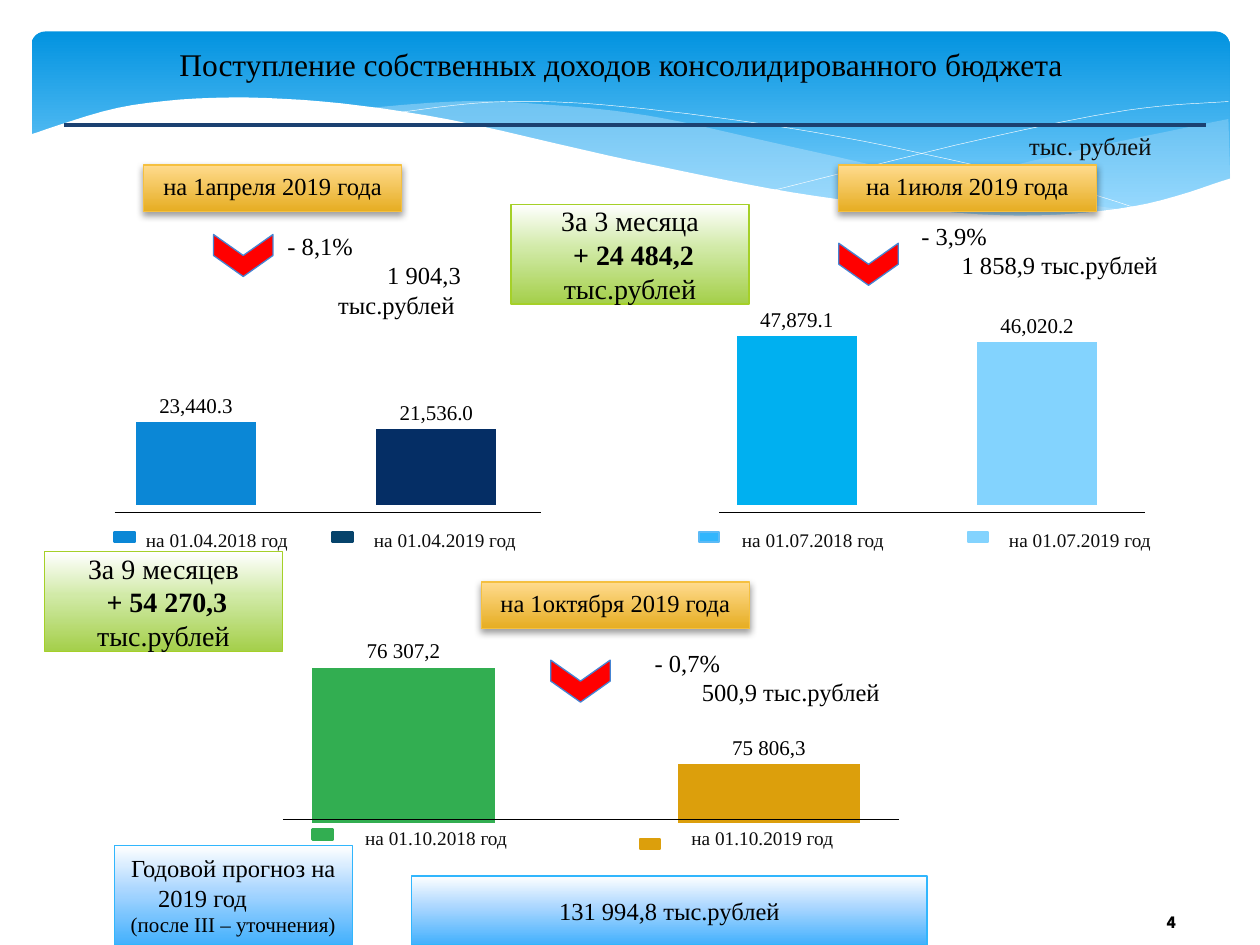
from collections import namedtuple

from lxml import etree
from pptx import Presentation
from pptx.chart import data as chart_data
from pptx.dml.color import RGBColor
from pptx.enum import chart as charts, shapes, text
from pptx.oxml.ns import qn
from pptx.util import Pt

COLORS = {
    "black": "000000", "white": "FFFFFF", "ink": "0D0D0D", "rule": "1B4171", "mist": "C6E7FC",
    "band_top": "0293E0", "band_end": "83D3FE", "red": "FF0000", "arrow_edge": "4584D3",
    "gold_top": "FFDB8E", "gold_end": "E6AD22", "gold_edge": "F5C040",
    "lime_mid": "D1EAA7", "lime_end": "A4CF4A", "lime_edge": "A5D028",
    "sky_mid": "ACD7FF", "sky_end": "42B0FD", "sky_edge": "31B6FD",
    "april18": "0B87D6", "april19": "052E65", "april19_key": "06436B",
    "july18": "00B0F0", "july18_edge": "5BBAF6", "july19": "83D3FE",
    "october18": "32AE51", "october19": "DC9F0C",
}
SERIF = "Times New Roman"
GOLD = [(0, "gold_top"), (100, "gold_end")]
LIME = [(0, "white"), (44, "lime_mid"), (100, "lime_end")]
SKY = [(0, "white"), (44, "sky_mid"), (100, "sky_end")]
THIN_LINE = {"closed": False, "edge": "white", "width": 0.25}

# Header waves, back to front: (look, smooth edges through points in the header box)
WAVES = [
    ({"fill": "mist", "alpha": 29},  # right
     [[(684, 50), (602, 67), (524, 85), (458, 97)],
      [(458, 97), (527, 104), (568, 106), (634, 99), (685, 84)]]),
    ({"fill": "mist", "alpha": 40},  # middle
     [[(625, 102), (540, 89), (435, 66), (352, 48), (284, 41), (242, 40), (188, 44)],
      [(188, 44), (258, 55), (364, 79), (461, 98), (547, 106), (625, 102)]]),
    (THIN_LINE, [[(204, 47), (271, 40), (349, 44), (461, 60), (580, 86), (635, 102)]]),
    (THIN_LINE, [[(423, 91), (541, 62), (626, 45), (684, 40)]]),
    ({"fill": "white"},  # front, down to the page
     [[(685, 84), (629, 100), (553, 105), (448, 94), (344, 74), (226, 48), (134, 38), (58, 42),
       (-1, 59)], [(-1, 143), (685, 143)]]),
]

# Places are (left, top); an axis and a plate also have a width.
Period = namedtuple("Period", "date plate arrow change_at change axis legend")
# Key and label places, label, fill, edge
Entry = namedtuple("Entry", "key label_at label fill edge", defaults=[None])
# Date, value, colour, own label text
Bar = namedtuple("Bar", "date value color label", defaults=[None])
GAP = None

PERIODS = [
    Period("на 1апреля 2019 года", (82, 94.3, 147.6), (127, 129), (156.2, 128.3),
           [("- 8,1%", 1), ("1 904,3", 58), ("тыс.рублей", 30)], (65.5, 292.7, 243.5),
           [Entry((65.5, 304), (76.3, 298.3), "на 01.04.2018 год", "april18"),
            Entry((190, 304), (206.6, 298.3), "на 01.04.2019 год", "april19_key")]),
    Period("на 1июля 2019 года", (479, 94.3, 147.6), (484.3, 134), (518.4, 122.6),
           [("- 3,9%", 1), ("1 858,9 тыс.рублей", 24)], (411, 292.7, 243.5),
           [Entry((399.6, 304), (416.9, 298.3), "на 01.07.2018 год", "sky_edge", "july18_edge"),
            Entry((553, 304), (569.5, 298.3), "на 01.07.2019 год", "july19")]),
    Period("на 1октября 2019 года", (275, 332.6, 153.4), (319.7, 372.2), (366, 366.5),
           [("- 0,7%", 1), ("500,9 тыс.рублей", 28)], (161.6, 468.5, 352),
           [Entry((178.6, 474), (201.6, 468.7), "на 01.10.2018 год", "october18"),
            Entry((365.8, 479.5), (388, 468.7), "на 01.10.2019 год", "october19")]),
]
HALF_YEAR_BARS = [
    Bar("на 01.04.2018 год", 23440.3, "april18"), GAP, Bar("на 01.04.2019 год", 21536.0, "april19"),
    GAP, GAP,
    Bar("на 01.07.2018 год", 47879.1, "july18"), GAP, Bar("на 01.07.2019 год", 46020.2, "july19")]
OCTOBER_BARS = [
    Bar("на 01.10.2018 год", 76307.2, "october18", "76 307,2"), GAP,
    Bar("на 01.10.2019 год", 75806.3, "october19", "75 806,3")]


def rgb(name):
    return RGBColor.from_string(COLORS[name])


def apply(target, values):
    for key, value in values.items():
        setattr(target, key, value)


def style_font(font, size, color="black", name=SERIF, bold=False):
    apply(font, {"size": Pt(size), "name": name, "bold": bold})
    font.color.rgb = rgb(color)


def line_of(words, indent=None, **font):
    """A paragraph of one run; an indent makes it left-aligned."""
    return [(words, font)], indent


def write(frame, paragraphs, size, align="CENTER", anchor="MIDDLE", wrap=True, **font):
    apply(frame, {"word_wrap": wrap, "vertical_anchor": getattr(text.MSO_ANCHOR, anchor)})
    for i, (runs, indent) in enumerate(paragraphs):
        line = frame.paragraphs[0] if i == 0 else frame.add_paragraph()
        line.alignment = getattr(text.PP_ALIGN, align if indent is None else "LEFT")
        if indent:
            line._p.get_or_add_pPr().set("marL", str(Pt(indent)))
        for words, own_font in runs:
            run = line.add_run()
            run.text = words
            style_font(run.font, **{"size": size, **font, **own_font})


def paint(shape, fill=None, edge=None, width=0.75, alpha=None):
    """Fill with a colour name, a list of gradient stops, or nothing."""
    shape.shadow.inherit = False
    if isinstance(fill, list):
        shape.fill.gradient()
        shape.fill.gradient_angle = 270
        stops = shape.element.spPr.find(qn("a:gradFill")).find(qn("a:gsLst"))
        for old in list(stops):
            stops.remove(old)
        for position, color in fill:
            stop = etree.SubElement(stops, qn("a:gs"), pos=str(position * 1000))
            etree.SubElement(stop, qn("a:srgbClr"), val=COLORS[color])
    elif fill:
        shape.fill.solid()
        shape.fill.fore_color.rgb = rgb(fill)
        if alpha:
            color = shape.element.spPr.find(qn("a:solidFill"))[0]
            etree.SubElement(color, qn("a:alpha"), val=str(alpha * 1000))
    else:
        shape.fill.background()
    if edge:
        shape.line.color.rgb = rgb(edge)
        shape.line.width = Pt(width)
    else:
        shape.line.fill.background()


def add_box(slide, kind, box, **look):
    shape = slide.shapes.add_shape(getattr(shapes.MSO_SHAPE, kind), *map(Pt, box))
    paint(shape, **look)
    return shape


def add_text(slide, box, paragraphs, size, **look):
    write(slide.shapes.add_textbox(*map(Pt, box)).text_frame, paragraphs, size, **look)


def add_rule(slide, left, top, width, color="black", weight=0.75):
    rule = slide.shapes.add_connector(shapes.MSO_CONNECTOR.STRAIGHT, Pt(left), Pt(top),
                                      Pt(left + width), Pt(top))
    rule.line.color.rgb = rgb(color)
    rule.line.width = Pt(weight)
    etree.SubElement(rule._element.spPr, qn("a:effectLst"))


def smooth(points, steps=8):
    """Catmull-Rom curve through the points."""
    padded = [points[0], *points, points[-1]]
    curve = [points[0]]
    for before, start, end, after in zip(padded, padded[1:], padded[2:], padded[3:]):
        for t in (n / steps for n in range(1, steps + 1)):
            curve.append(tuple(
                (2 * q + (r - p) * t + (2 * p - 5 * q + 4 * r - s) * t ** 2
                 + (3 * q - p - 3 * r + s) * t ** 3) / 2
                for p, q, r, s in zip(before, start, end, after)))
    return curve


def add_wave(slide, left, top, edges, closed=True, **look):
    units = 10  # per point
    outline = [((left + x) * units, (top + y) * units) for edge in edges for x, y in smooth(edge)]
    builder = slide.shapes.build_freeform(*outline[0], scale=Pt(1) / units)
    builder.add_line_segments(outline[1:], close=closed)
    paint(builder.convert_to_shape(), **look)


def header(slide, left, top, width, height):
    band = add_box(slide, "ROUNDED_RECTANGLE", (left, top, width, height),
                   fill=[(0, "band_top"), (90, "band_end")])
    band.adjustments[0] = 0.07
    for look, edges in WAVES:
        add_wave(slide, left, top, edges, **look)
    # Title above the band
    title = slide.shapes.title
    title_box = {"left": left + 5.5, "top": top - 10, "width": 663, "height": 77}
    apply(title, {side: Pt(length) for side, length in title_box.items()})
    slide.shapes._spTree.append(title.element)
    title.text_frame.margin_bottom = Pt(23)
    write(title.text_frame, [line_of("Поступление собственных доходов консолидированного бюджета")], 18)
    # Rule and unit
    add_rule(slide, left + 18.7, top + 53.3, 652.3, "rule", 2.25)
    add_text(slide, (left + 563, top + 53.3, 85, 24.5), [line_of("тыс. рублей")], 14,
             align="LEFT", anchor="TOP", wrap=False, color="ink")


def date_plate(slide, left, top, width, label):
    plate = add_box(slide, "RECTANGLE", (left, top, width, 26.6), fill=GOLD, edge="gold_edge")
    effects = plate.element.spPr.find(qn("a:effectLst"))
    shadow = etree.SubElement(effects, qn("a:outerShdw"), blurRad=str(Pt(4)), dist=str(Pt(2)),
                              dir="5400000", rotWithShape="0")
    color = etree.SubElement(shadow, qn("a:srgbClr"), val=COLORS["black"])
    etree.SubElement(color, qn("a:alpha"), val="38000")
    write(plate.text_frame, [line_of(label)], 14, anchor="TOP")


def period_panel(slide, period):
    """Date plate, down arrow with the change, axis line and legend."""
    date_plate(slide, *period.plate, period.date)
    arrow = add_box(slide, "CHEVRON", (*period.arrow, 24, 34), fill="red", edge="arrow_edge")
    arrow.rotation = 90
    add_text(slide, (*period.change_at, 170, 51), [line_of(*line) for line in period.change], 14,
             anchor="TOP")
    add_rule(slide, *period.axis)
    for entry in period.legend:
        add_box(slide, "RECTANGLE", (*entry.key, 11.5, 5.7), fill=entry.fill,
                edge=entry.edge or entry.fill, width=1.25)
        add_text(slide, (*entry.label_at, 96.5, 21), [line_of(entry.label)], 11,
                 align="LEFT", anchor="TOP", wrap=False, color="ink")


def total_box(slide, left, top, period, amount):
    box = add_box(slide, "RECTANGLE", (left, top, 136, 57), fill=LIME, edge="lime_edge")
    growth = [(f" {amount} ", {"bold": True}), ("тыс.рублей", {})], None
    write(box.text_frame, [line_of(period), growth], 16)


def forecast(slide, left, top):
    name = add_box(slide, "RECTANGLE", (left, top, 136, 57), fill=SKY, edge="sky_edge")
    write(name.text_frame, [line_of("Годовой прогноз на"), line_of("2019 год", 18),
                            line_of("(после III – уточнения)", size=12)], 14)
    amount = add_box(slide, "RECTANGLE", (left + 170, top + 17.5, 294.5, 39.5), fill=SKY, edge="sky_edge")
    write(amount.text_frame, [line_of("131 994,8 тыс.рублей")], 14)


def page_number(slide, left, top, number):
    add_text(slide, (left, top, 83, 29), [line_of(number)], 10, name="League Spartan", bold=True)


def income_chart(slide, box, plot_box, low, high, bars):
    source = chart_data.CategoryChartData(number_format="#,##0.0")
    source.categories = ["1"]
    for bar in bars:
        source.add_series(bar.date if bar else "", [bar.value if bar else None])
    chart = slide.shapes.add_chart(charts.XL_CHART_TYPE.COLUMN_CLUSTERED, *map(Pt, box), source).chart
    apply(chart, {"has_legend": False, "has_title": False})
    style_font(chart.font, 18, name="Calibri")
    apply(chart.value_axis, {"visible": False, "has_major_gridlines": False,
                             "minimum_scale": low, "maximum_scale": high})
    chart.category_axis.visible = False
    plot = chart.plots[0]
    apply(plot, {"gap_width": 150, "overlap": 0, "vary_by_categories": False})
    above = charts.XL_LABEL_POSITION.OUTSIDE_END
    for series, bar in zip(plot.series, bars):
        if bar is GAP:
            continue
        series.format.fill.solid()
        series.format.fill.fore_color.rgb = rgb(bar.color)
        apply(series.data_labels, {"show_value": True, "number_format": "#,##0.0",
                                   "number_format_is_linked": False, "position": above})
        style_font(series.data_labels.font, 12)
        if bar.label:
            label = series.points[0].data_label
            run = label.text_frame.paragraphs[0].add_run()
            run.text = bar.label
            style_font(run.font, 12)
            label.position = above
    # Fixed inner plot area
    area = chart._chartSpace.find(".//" + qn("c:plotArea"))
    for old in area.findall(qn("c:layout")):
        area.remove(old)
    layout = etree.Element(qn("c:layout"))
    area.insert(0, layout)
    manual = etree.SubElement(layout, qn("c:manualLayout"))
    settings = {"layoutTarget": "inner", "xMode": "edge", "yMode": "edge", **dict(zip("xywh", plot_box))}
    for tag, value in settings.items():
        etree.SubElement(manual, qn("c:" + tag), val=str(value))


def main():
    deck = Presentation()
    deck.slide_width, deck.slide_height = Pt(720), Pt(540)
    slide = deck.slides.add_slide(deck.slide_layouts[5])
    header(slide, 18, 18, 684.7, 112.3)
    income_chart(slide, (19.5, 162.3, 672.5, 130.3), (0.01, 0.04, 0.97, 0.93), 0, 60000, HALF_YEAR_BARS)
    income_chart(slide, (100, 349.5, 500, 136), (0, 0.16, 0.94, 0.73), 75500, 76400, OCTOBER_BARS)
    for period in PERIODS:
        period_panel(slide, period)
    total_box(slide, 292, 116.8, "За 3 месяца", "+ 24 484,2")
    total_box(slide, 25.4, 315.2, "За 9 месяцев", "+ 54 270,3")
    forecast(slide, 65.3, 483)
    page_number(slide, 628, 512, "4")
    deck.save("out.pptx")


if __name__ == "__main__":
    main()
